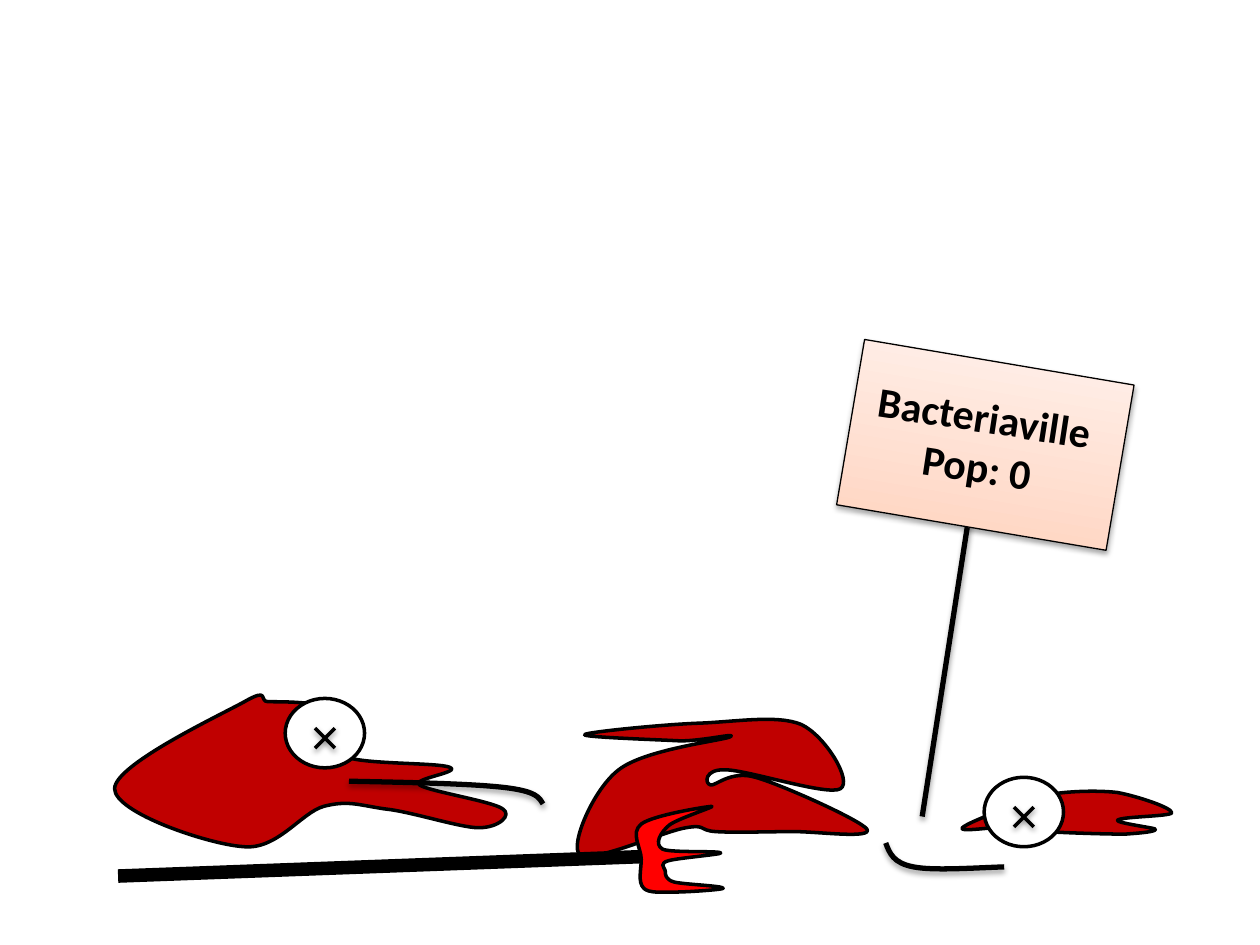
from dataclasses import dataclass

from lxml import etree
from pptx import Presentation
from pptx import util as u
from pptx.dml.color import RGBColor
from pptx.enum import shapes, text
from pptx.oxml import ns


@dataclass(frozen=True)
class Theme:
    ink: RGBColor = RGBColor(0, 0, 0)
    eye: RGBColor = RGBColor(255, 255, 255)
    body: RGBColor = RGBColor(0xC0, 0, 0)
    claw: RGBColor = RGBColor(0xFF, 0, 0)
    sign_bottom: RGBColor = RGBColor(0xFF, 0xD2, 0xBD)
    sign_top: RGBColor = RGBColor(0xFF, 0xF2, 0xED)
    font: str = "Calibri"
    sign_size: u.Pt = u.Pt(24)
    border: u.Pt = u.Pt(0.75)
    outline: u.Pt = u.Pt(2)
    stroke: u.Pt = u.Pt(3)
    ground: u.Pt = u.Pt(7.75)


theme = Theme()
UNIT = u.Cm(2.54) / 100

prs = Presentation()
prs.slide_width, prs.slide_height = u.Cm(25.4), u.Cm(19.05)
slide = prs.slides.add_slide(prs.slide_layouts[6])


def add_curve(points, width, fill=None):
    builder = slide.shapes.build_freeform(*points[0], scale=UNIT)
    builder.add_line_segments(points[1:], close=fill is not None)
    curve = builder.convert_to_shape()
    segments = list(curve._element.iter(ns.qn("a:lnTo")))
    for i in range(0, len(segments), 3):
        bezier = etree.Element(ns.qn("a:cubicBezTo"))
        segments[i].addprevious(bezier)
        for segment in segments[i:i + 3]:
            bezier.append(segment[0])
            segment.getparent().remove(segment)
    curve.line.color.rgb = theme.ink
    curve.line.width = width
    if fill is None:
        curve.fill.background()
    else:
        curve.fill.solid()
        curve.fill.fore_color.rgb = fill
        curve.shadow.inherit = False


def add_stroke(x1, y1, x2, y2, width):
    stroke = slide.shapes.add_connector(
        shapes.MSO_CONNECTOR.STRAIGHT, u.Cm(x1), u.Cm(y1), u.Cm(x2), u.Cm(y2))
    stroke.line.color.rgb = theme.ink
    stroke.line.width = width
    return stroke


add_stroke(18.59, 16.46, 19.58, 10.11, theme.stroke)

sign = slide.shapes.add_shape(
    shapes.MSO_SHAPE.RECTANGLE, u.Cm(17.11), u.Cm(7.28), u.Cm(5.51), u.Cm(3.38))
sign.rotation = 9.6
sign.fill.gradient()
sign.fill.gradient_angle = 90
for stop, colour in zip(sign.fill.gradient_stops, (theme.sign_bottom, theme.sign_top)):
    stop.color.rgb = colour
sign.line.color.rgb = theme.ink
sign.line.width = theme.border

left_head = [
    (194, 557), (174, 568), (91, 607), (91, 626), (91, 645), (165, 670), (193, 672),
    (220, 675), (239, 645), (257, 640), (276, 635), (285, 639), (305, 642),
    (326, 644), (365, 657), (380, 657), (396, 657), (407, 647), (399, 642),
    (391, 636), (340, 628), (333, 623), (326, 618), (367, 613), (357, 609),
    (347, 605), (286, 607), (273, 600), (259, 593), (281, 575), (276, 568),
    (271, 561), (253, 560), (242, 558), (231, 557), (221, 557), (213, 557),
    (205, 557), (215, 545), (194, 557)]
torso = [
    (579, 585), (571, 588), (511, 595), (491, 611), (471, 626), (452, 671), (460, 678),
    (469, 686), (526, 660), (544, 657), (561, 654), (554, 659), (568, 660),
    (583, 661), (610, 660), (630, 660), (650, 660), (693, 666), (688, 658),
    (683, 651), (621, 623), (600, 617), (580, 611), (568, 624), (564, 623),
    (559, 622), (559, 610), (576, 611), (593, 611), (657, 632), (667, 626),
    (677, 620), (655, 584), (636, 575), (617, 567), (583, 573), (554, 574),
    (526, 575), (466, 581), (464, 583), (461, 585), (521, 587), (540, 588),
    (559, 588), (587, 581), (579, 585)]
right_head = [
    (887, 629), (870, 627), (846, 628), (830, 631), (814, 633), (801, 640), (790, 645),
    (779, 649), (760, 657), (764, 658), (767, 660), (800, 655), (811, 655),
    (823, 656), (818, 659), (831, 660), (845, 661), (878, 662), (893, 662),
    (907, 661), (918, 660), (917, 658), (916, 657), (885, 653), (887, 651),
    (889, 648), (930, 648), (930, 645), (930, 641), (903, 632), (887, 629)]
for part in (left_head, torso, right_head):
    add_curve(part, theme.outline, theme.body)

for left, top in ((19.84, 15.67), (5.75, 14.08)):
    eye = slide.shapes.add_shape(
        shapes.MSO_SHAPE.OVAL, u.Cm(left), u.Cm(top), u.Cm(1.6), u.Cm(1.4))
    eye.fill.solid()
    eye.fill.fore_color.rgb = theme.eye
    eye.line.color.rgb = theme.ink
    eye.line.width = theme.outline
    eye.shadow.inherit = False
    x1, x2 = left + 0.6, left + 1
    y1, y2 = top + 0.6, top + 1
    add_stroke(x1, y1, x2, y2, theme.outline)
    add_stroke(x2, y1, x1, y2, theme.outline)

ground = add_stroke(2.38, 17.66, 12.9, 17.27, theme.ground)
ground.line._get_or_add_ln().addnext(etree.Element(ns.qn("a:effectLst")))

claw = [
    (509, 682), (509, 673), (500, 661), (509, 654), (518, 647), (561, 640), (565, 640),
    (568, 640), (537, 650), (531, 655), (524, 661), (519, 670), (526, 674),
    (533, 677), (572, 675), (572, 677), (573, 678), (538, 681), (531, 683),
    (523, 685), (527, 688), (528, 691), (528, 694), (528, 698), (535, 700),
    (543, 702), (574, 703), (574, 705), (574, 706), (546, 708), (535, 708),
    (525, 708), (515, 709), (511, 705), (506, 700), (509, 690), (509, 682)]
add_curve(claw, theme.outline, theme.claw)

right_mouth = [(797, 688), (769, 689), (740, 691), (725, 688), (709, 685), (706, 677), (703, 669)]
left_mouth = [(277, 620), (326, 621), (374, 622), (400, 625), (426, 628), (428, 633), (431, 638)]
for mouth in (right_mouth, left_mouth):
    add_curve(mouth, theme.stroke)

caption = slide.shapes.add_textbox(u.Cm(17.09), u.Cm(7.75), u.Cm(5.36), u.Cm(2.31))
caption.rotation = 8.7
frame = caption.text_frame
frame.word_wrap = True
frame.auto_size = text.MSO_AUTO_SIZE.SHAPE_TO_FIT_TEXT
frame.text = "Bacteriaville\nPop: 0"
for paragraph in frame.paragraphs:
    paragraph.alignment = text.PP_ALIGN.CENTER
    paragraph.font.name = theme.font
    paragraph.font.size = theme.sign_size
    paragraph.font.bold = True
    paragraph.font.color.rgb = theme.ink

prs.save("out.pptx")
